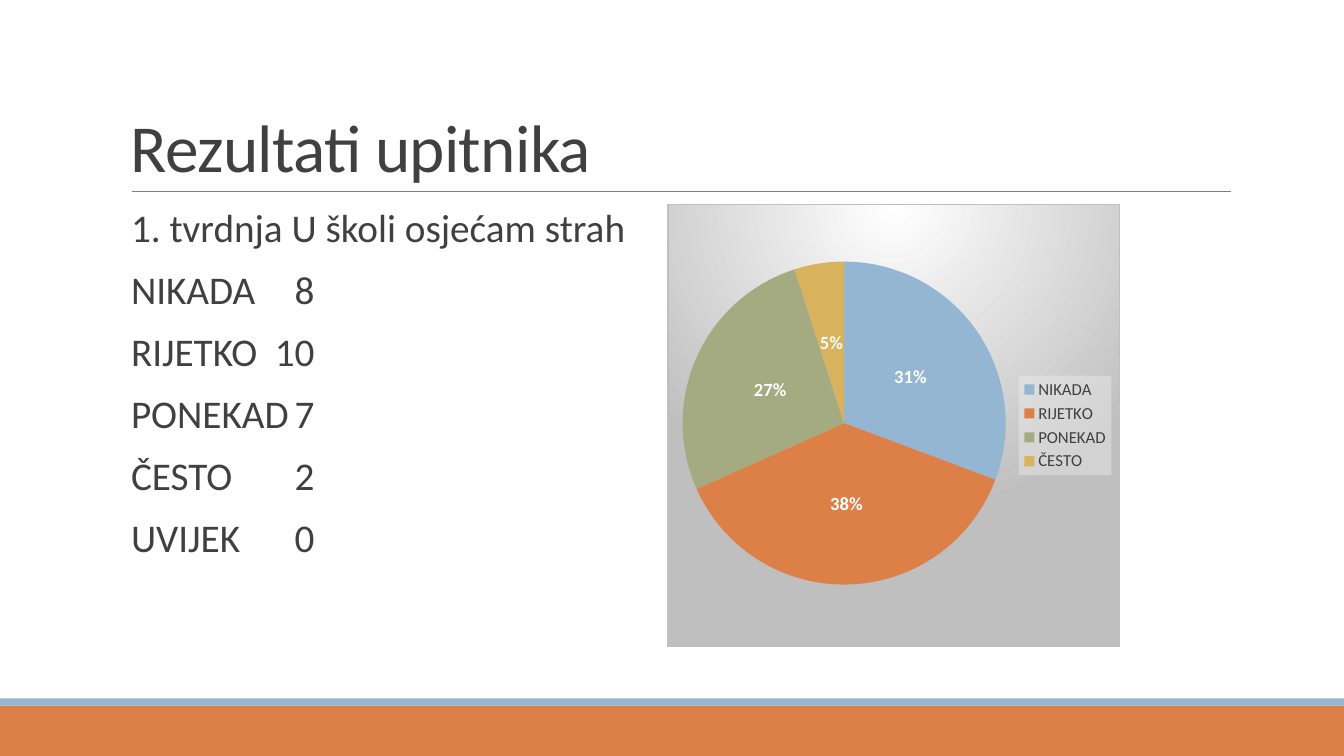
from dataclasses import dataclass

from lxml import etree
from pptx import Presentation
from pptx.chart.data import CategoryChartData
from pptx.dml.color import RGBColor
from pptx.enum.chart import XL_CHART_TYPE, XL_LABEL_POSITION, XL_LEGEND_POSITION
from pptx.enum.shapes import MSO_CONNECTOR, MSO_SHAPE
from pptx.enum.text import MSO_ANCHOR
from pptx.oxml import parse_xml
from pptx.oxml.ns import nsdecls, qn
from pptx.util import Inches, Pt

PIE = XL_CHART_TYPE.PIE
CENTER = XL_LABEL_POSITION.CENTER
RIGHT = XL_LEGEND_POSITION.RIGHT
RECT = MSO_SHAPE.RECTANGLE
STRAIGHT = MSO_CONNECTOR.STRAIGHT
TOP, BOTTOM = MSO_ANCHOR.TOP, MSO_ANCHOR.BOTTOM


@dataclass(frozen=True)
class Theme:
    font: str = "Calibri"
    ink: str = "404040"
    white: str = "FFFFFF"
    rule: str = "808080"
    edge: str = "BFBFBF"
    pale: str = "F2F2F2"
    blue: str = "94B6D2"
    rust: str = "DD8047"
    green: str = "A5AB81"
    gold: str = "D8B25C"
    title: float = 48
    body: float = 28
    label: float = 13.3
    key: float = 12


THEME = Theme()
ANSWERS = [("NIKADA", 8), ("RIJETKO", 10), ("PONEKAD", 7), ("ČESTO", 2), ("UVIJEK", 0)]
SHARES = [
    ("NIKADA", 31, THEME.blue),
    ("RIJETKO", 38, THEME.rust),
    ("PONEKAD", 27, THEME.green),
    ("ČESTO", 5, THEME.gold),
]


def rgb(code):
    return RGBColor.from_string(code)


def place(box):
    return [Inches(part) for part in box]


def style(font, size, color, bold=False):
    font.name = THEME.font
    font.size = Pt(size)
    font.bold = bold
    font.color.rgb = rgb(color)


def add_text(slide, box, lines, size, anchor=TOP, inset=0.0, line=0.9,
             before=0, after=0, track=None, tab=None):
    frame = slide.shapes.add_textbox(*place(box)).text_frame
    frame.word_wrap = True
    frame.vertical_anchor = anchor
    frame.margin_left = frame.margin_right = Inches(inset)
    for i, words in enumerate(lines):
        para = frame.paragraphs[0] if i == 0 else frame.add_paragraph()
        para.line_spacing = line
        para.space_before, para.space_after = Pt(before), Pt(after)
        run = para.add_run()
        run.text = words
        style(run.font, size, THEME.ink)
        if track is not None:
            run.font._element.set("spc", str(int(track * 100)))
        if tab is not None:
            stops = etree.SubElement(para._p.get_or_add_pPr(), qn("a:tabLst"))
            etree.SubElement(stops, qn("a:tab"), pos=str(Inches(tab)), algn="r")


def add_band(slide, box, color):
    band = slide.shapes.add_shape(RECT, *place(box))
    band.shadow.inherit = False
    band.fill.solid()
    band.fill.fore_color.rgb = rgb(color)
    band.line.fill.background()


def add_foot(slide, box):
    left, top, width, height = box
    strip = 0.07
    add_band(slide, (left, top + strip, width, height - strip), THEME.rust)
    add_band(slide, (left, top, width, strip), THEME.blue)


def add_head(slide, box):
    left, top, width, height = box
    base = top + height
    rule = slide.shapes.add_connector(
        STRAIGHT, *place((left + 0.11, base, left + width + 0.01, base)))
    rule.line.color.rgb = rgb(THEME.rule)
    rule.line.width = Pt(0.5)
    etree.SubElement(rule._element.spPr, qn("a:effectLst"))
    add_text(slide, box, ["Rezultati upitnika"], THEME.title, anchor=BOTTOM,
             inset=0.1, line=0.85, track=-0.5)


def add_list(slide, box):
    lines = ["1. tvrdnja U školi osjećam strah"]
    lines += [f"{name}\t{count}" for name, count in ANSWERS]
    add_text(slide, box, lines, THEME.body, before=12, after=2, tab=1.82)


def paint_chart(chart):
    root = chart.element
    root.find(qn("c:chart")).addnext(parse_xml(
        f'<c:spPr {nsdecls("c", "a")}><a:gradFill><a:gsLst>'
        f'<a:gs pos="0"><a:srgbClr val="{THEME.white}"/></a:gs>'
        f'<a:gs pos="100000"><a:srgbClr val="{THEME.edge}"/></a:gs></a:gsLst>'
        '<a:path path="circle">'
        '<a:fillToRect l="50000" t="0" r="50000" b="100000"/></a:path></a:gradFill>'
        f'<a:ln w="{Pt(0.75)}"><a:solidFill><a:srgbClr val="{THEME.edge}"/>'
        '</a:solidFill></a:ln></c:spPr>'))
    root.find(".//" + qn("c:legend")).find(qn("c:overlay")).addnext(parse_xml(
        f'<c:spPr {nsdecls("c", "a")}><a:solidFill><a:srgbClr val="{THEME.pale}">'
        '<a:alpha val="39000"/></a:srgbClr></a:solidFill></c:spPr>'))
    plot = root.find(".//" + qn("c:plotArea"))
    for old in plot.findall(qn("c:layout")):
        plot.remove(old)
    spots = "".join(f'<c:{key} val="{val}"/>' for key, val in [
        ("layoutTarget", "inner"), ("xMode", "edge"), ("yMode", "edge"),
        ("x", 0.03), ("y", 0.13), ("w", 0.72), ("h", 0.73)])
    plot.insert(0, parse_xml(
        f'<c:layout {nsdecls("c")}><c:manualLayout>{spots}</c:manualLayout></c:layout>'))


def add_pie(slide, box):
    data = CategoryChartData()
    data.categories = [name for name, _, _ in SHARES]
    data.add_series("Series 1", [share for _, share, _ in SHARES])
    chart = slide.shapes.add_chart(PIE, *place(box), data).chart
    chart.has_title = False
    style(chart.font, THEME.key, THEME.ink)
    chart.has_legend = True
    chart.legend.position = RIGHT
    chart.legend.include_in_layout = False
    style(chart.legend.font, THEME.key, THEME.ink)
    plot = chart.plots[0]
    plot.vary_by_categories = True
    for i, (_, _, color) in enumerate(SHARES):
        fill = plot.series[0].points[i].format.fill
        fill.solid()
        fill.fore_color.rgb = rgb(color)
    plot.has_data_labels = True
    labels = plot.data_labels
    labels.show_percentage = True
    labels.show_value = False
    labels.number_format = "0%"
    labels.number_format_is_linked = False
    labels.position = CENTER
    style(labels.font, THEME.label, THEME.white, bold=True)
    paint_chart(chart)


def main():
    deck = Presentation()
    deck.slide_width, deck.slide_height = Inches(13.33), Inches(7.5)
    slide = deck.slides.add_slide(deck.slide_layouts[6])
    add_foot(slide, (0, 6.93, 13.33, 0.57))
    add_head(slide, (1.2, 0.31, 11, 1.59))
    add_list(slide, (1.3, 2.02, 5.2, 4.4))
    add_pie(slide, (6.62, 2.02, 4.49, 4.4))
    deck.save("out.pptx")


if __name__ == "__main__":
    main()
